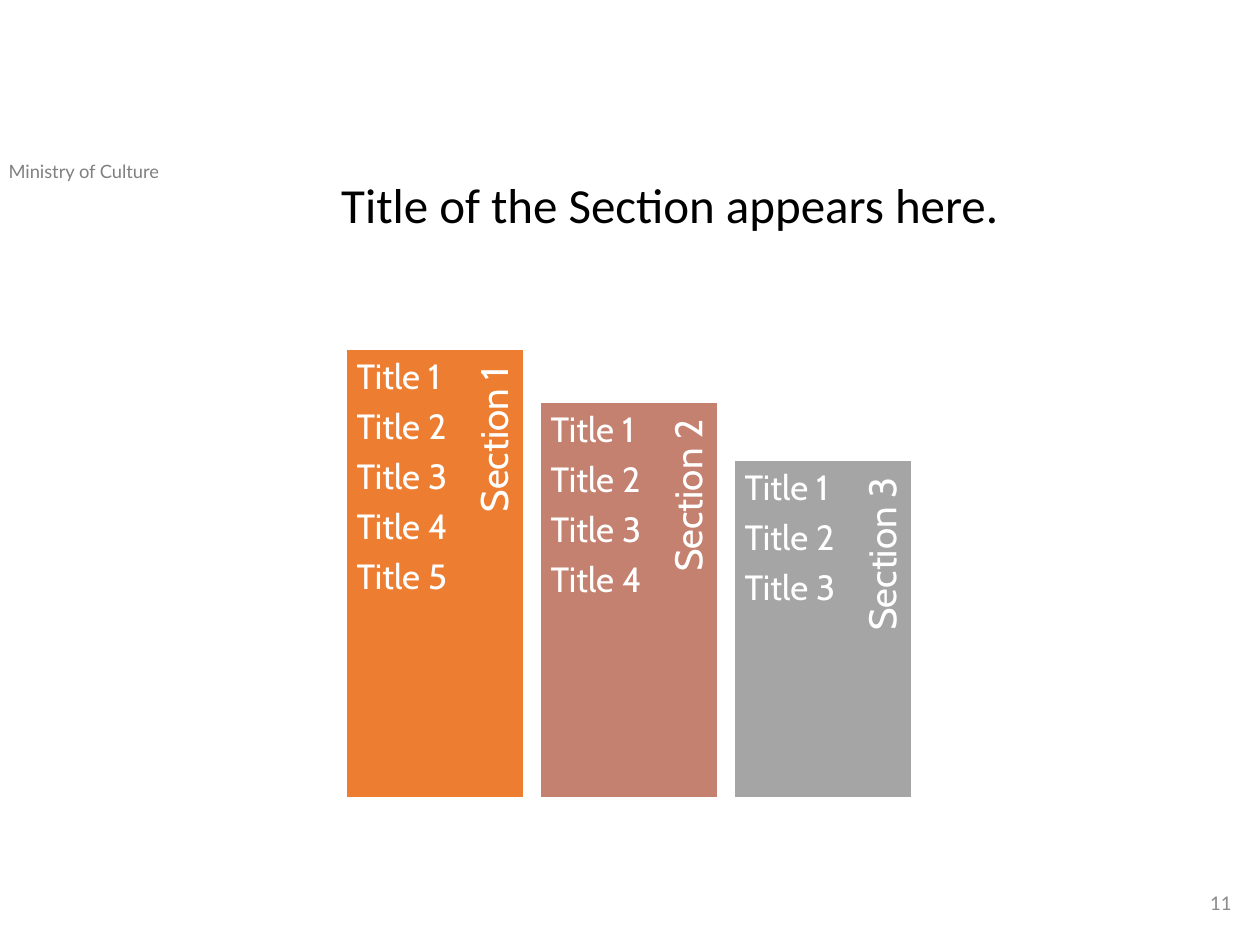
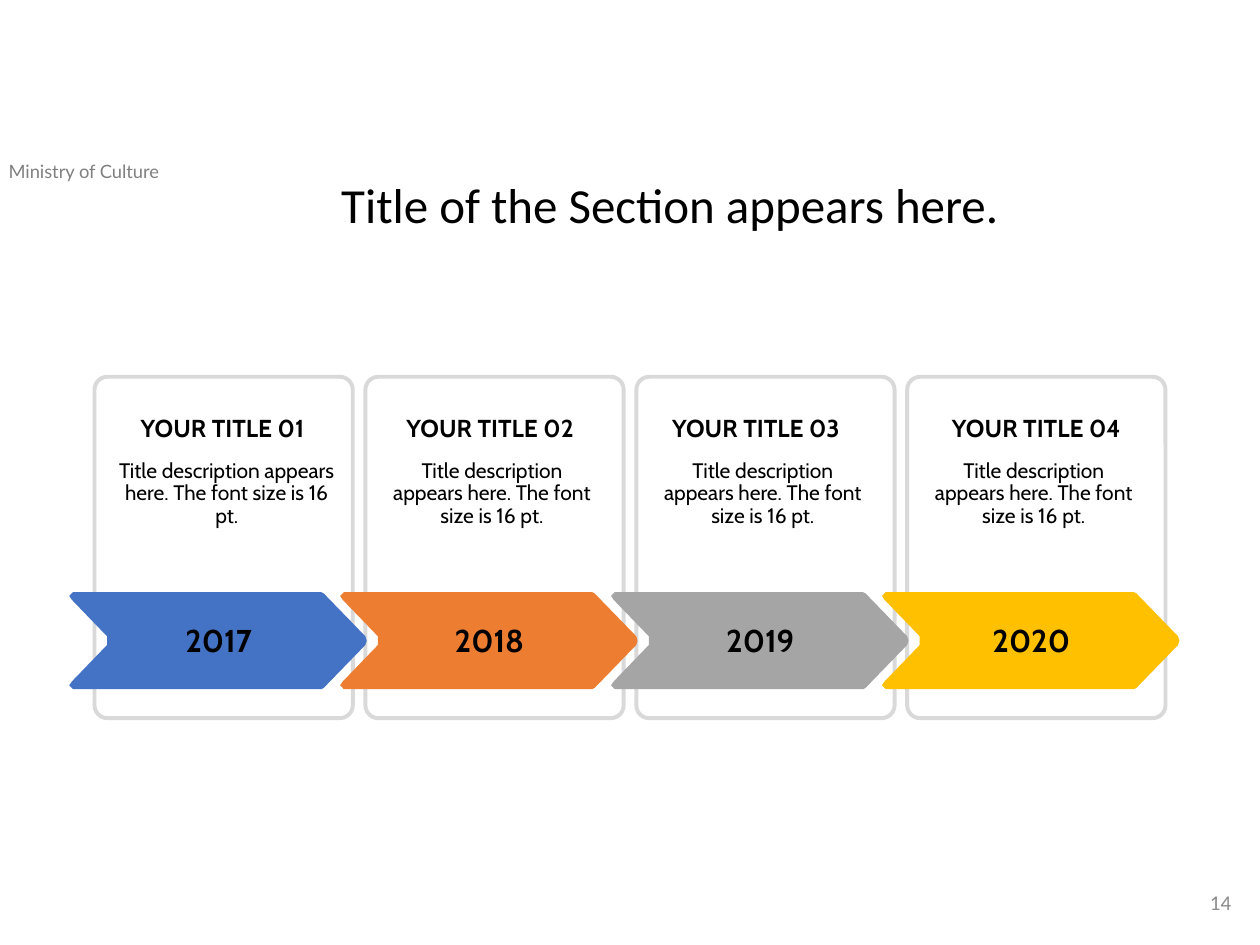
from dataclasses import dataclass

from pptx import Presentation
from pptx.dml.color import RGBColor
from pptx.enum.shapes import MSO_SHAPE
from pptx.enum.text import MSO_ANCHOR, PP_ALIGN
from pptx.presentation import Presentation as Deck
from pptx.slide import Slide
from pptx.util import Inches, Pt

RECT, ROUNDED = MSO_SHAPE.RECTANGLE, MSO_SHAPE.ROUNDED_RECTANGLE
LEFT, CENTER, RIGHT = PP_ALIGN.LEFT, PP_ALIGN.CENTER, PP_ALIGN.RIGHT
TOP, MIDDLE, BOTTOM = MSO_ANCHOR.TOP, MSO_ANCHOR.MIDDLE, MSO_ANCHOR.BOTTOM

BLACK = RGBColor(0x00, 0x00, 0x00)
WHITE = RGBColor(0xFF, 0xFF, 0xFF)
HEADER_GRAY = RGBColor(0x80, 0x80, 0x80)
NUMBER_GRAY = RGBColor(0x8C, 0x8C, 0x8C)
FRAME_GRAY = RGBColor(0xD9, 0xD9, 0xD9)
BLUE = RGBColor(0x44, 0x72, 0xC4)
ORANGE = RGBColor(0xED, 0x7D, 0x31)
ROSE = RGBColor(0xC4, 0x81, 0x70)
GRAY = RGBColor(0xA5, 0xA5, 0xA5)
GOLD = RGBColor(0xFF, 0xC0, 0x00)


@dataclass(frozen=True)
class Box:
    left: float
    top: float
    width: float
    height: float

    def lengths(self) -> tuple[int, ...]:
        return tuple(Inches(v) for v in (self.left, self.top, self.width, self.height))


@dataclass(frozen=True)
class Style:
    font: str
    size: float
    color: RGBColor
    bold: bool = False
    align: PP_ALIGN = LEFT
    anchor: MSO_ANCHOR = TOP
    line_spacing: float = 1.0
    space_after: float = 0
    insets: tuple[float, float, float, float] = (0.1, 0.05, 0.1, 0.05)


@dataclass(frozen=True)
class Column:
    label: str
    titles: int
    top: float
    color: RGBColor


@dataclass(frozen=True)
class Step:
    year: str
    heading: str
    color: RGBColor
    heading_offset: float
    heading_width: float
    text_width: float = 1.77


HEADER = Style("Lato", 10.5, HEADER_GRAY)
TITLE = Style("Calibri", 28, BLACK, line_spacing=0.9)
NUMBER = Style("Calibri", 12, NUMBER_GRAY, align=RIGHT, anchor=MIDDLE)
COLUMN_LABEL = Style("Cabin", 22, WHITE, align=RIGHT, anchor=MIDDLE,
                     line_spacing=0.9, insets=(0.09, 0, 0.14, 0.03))
COLUMN_TITLES = Style("Cabin", 20, WHITE, line_spacing=0.9, space_after=7,
                      insets=(0.08, 0.08, 0.08, 0.08))
YEAR = Style("Cabin", 18, BLACK, bold=True, align=CENTER, anchor=MIDDLE)
HEADING = Style("Cabin", 14, BLACK, bold=True, align=CENTER, anchor=BOTTOM)
DESCRIPTION = Style("Cabin", 12, BLACK, align=CENTER, line_spacing=0.9,
                    insets=(0.04, 0.02, 0.04, 0.02))

COLUMNS = [
    Column("Section 1", 5, 2.77, ORANGE),
    Column("Section 2", 4, 3.19, ROSE),
    Column("Section 3", 3, 3.65, GRAY),
]
COLUMN_LEFT, COLUMN_PITCH, COLUMN_WIDTH, COLUMN_BOTTOM = 2.75, 1.54, 1.41, 6.33
LABEL_CENTER, LABEL_THICKNESS = 1.2, 0.37

STEPS = [
    Step("2017", "YOUR TITLE 01", BLUE, 0.07, 1.89, 1.86),
    Step("2018", "YOUR TITLE 02", ORANGE, 0.08, 1.82),
    Step("2019", "YOUR TITLE 03", GRAY, 0.02, 1.86),
    Step("2020", "YOUR TITLE 04", GOLD, 0.08, 1.89),
]
STEP_TEXT = "Title description appears here. The font size is 16 pt."
STEP_LEFT, STEP_PITCH = 0.75, 2.15
ARROW_TOP, ARROW_HEIGHT = 4.7, 0.77
ARROW_UPPER_EDGE = [(0.3, 0.35), (0.02, 0.06), (0, 0.03), (0.03, 0),
                    (2, 0), (2.02, 0.01), (2.35, 0.35), (2.36, 0.38)]
ARROW_OUTLINE = ARROW_UPPER_EDGE + [
    (x, ARROW_HEIGHT - y) for x, y in reversed(ARROW_UPPER_EDGE)]


def add_text(s: Slide, box: Box, lines: list[str], style: Style, rotation: float = 0) -> None:
    sp = s.shapes.add_textbox(*box.lengths())
    sp.rotation = rotation
    tf = sp.text_frame
    tf.word_wrap = True
    tf.vertical_anchor = style.anchor
    tf.margin_left, tf.margin_top, tf.margin_right, tf.margin_bottom = (
        Inches(v) for v in style.insets)
    for i, line in enumerate(lines):
        p = tf.add_paragraph() if i else tf.paragraphs[0]
        p.alignment = style.align
        p.line_spacing = style.line_spacing
        p.space_after = Pt(style.space_after)
        r = p.add_run()
        r.text = line
        r.font.name = style.font
        r.font.size = Pt(style.size)
        r.font.bold = style.bold
        r.font.color.rgb = style.color


def add_base(prs: Deck, number: str) -> Slide:
    s = prs.slides.add_slide(prs.slide_layouts[6])
    add_text(s, Box(-0.03, 1.22, 2.18, 0.28), ["Ministry of Culture"], HEADER)
    add_text(s, Box(2.61, 1.39, 6.38, 0.79), ["Title of the Section appears here."], TITLE)
    add_text(s, Box(7.62, 6.96, 2.25, 0.4), [number], NUMBER)
    return s


def add_column(s: Slide, left: float, column: Column) -> None:
    height = COLUMN_BOTTOM - column.top
    sp = s.shapes.add_shape(RECT, *Box(left, column.top, COLUMN_WIDTH, height).lengths())
    sp.shadow.inherit = False
    sp.fill.solid()
    sp.fill.fore_color.rgb = column.color
    sp.line.color.rgb = WHITE
    sp.line.width = Pt(1)
    length = 0.9 * height
    label = Box(left + LABEL_CENTER - length / 2,
                column.top + (length - LABEL_THICKNESS) / 2, length, LABEL_THICKNESS)
    add_text(s, label, [column.label], COLUMN_LABEL, rotation=270)
    titles = [f"Title {n}" for n in range(1, column.titles + 1)]
    add_text(s, Box(left, column.top, 1, height), titles, COLUMN_TITLES)


def add_frame(s: Slide, left: float) -> None:
    sp = s.shapes.add_shape(ROUNDED, *Box(left, 2.99, 2.05, 2.71).lengths())
    sp.adjustments[0] = 0.05
    sp.shadow.inherit = False
    sp.fill.background()
    sp.line.color.rgb = FRAME_GRAY
    sp.line.width = Pt(2.25)


def add_arrow(s: Slide, left: float, color: RGBColor) -> None:
    points = [(Inches(left + x), Inches(ARROW_TOP + y)) for x, y in ARROW_OUTLINE]
    builder = s.shapes.build_freeform(*points[0])
    builder.add_line_segments(points[1:], close=True)
    sp = builder.convert_to_shape()
    sp.shadow.inherit = False
    sp.fill.solid()
    sp.fill.fore_color.rgb = color
    sp.line.fill.background()


def add_step(s: Slide, left: float, step: Step) -> None:
    add_arrow(s, left - 0.2, step.color)
    add_text(s, Box(left + 0.57, 4.88, 0.83, 0.4), [step.year], YEAR)
    add_text(s, Box(left + step.heading_offset, 3.22, step.heading_width, 0.34),
             [step.heading], HEADING)
    add_text(s, Box(left + 0.12, 3.63, step.text_width, 0.58), [STEP_TEXT], DESCRIPTION)


def build_columns(prs: Deck) -> None:
    s = add_base(prs, "11")
    for i, column in enumerate(COLUMNS):
        add_column(s, COLUMN_LEFT + i * COLUMN_PITCH, column)


def build_timeline(prs: Deck) -> None:
    s = add_base(prs, "14")
    lefts = [STEP_LEFT + i * STEP_PITCH for i in range(len(STEPS))]
    for left in lefts:
        add_frame(s, left)
    for left, step in zip(lefts, STEPS):
        add_step(s, left, step)


def main() -> None:
    prs = Presentation()
    prs.slide_width, prs.slide_height = Inches(10), Inches(7.5)
    build_columns(prs)
    build_timeline(prs)
    prs.save("out.pptx")


if __name__ == "__main__":
    main()
